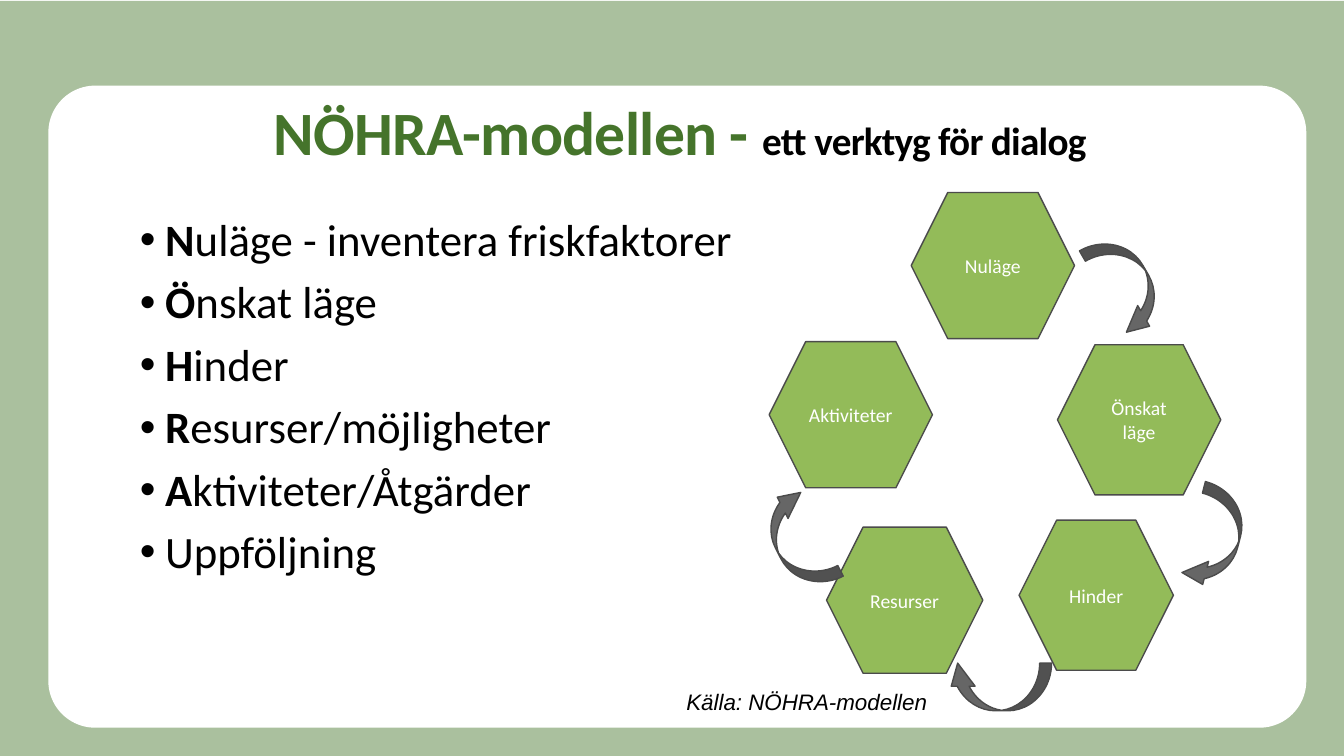
from lxml.etree import SubElement
from pptx import Presentation
from pptx.dml.color import RGBColor
from pptx.enum.shapes import MSO_SHAPE
from pptx.enum.text import MSO_ANCHOR, MSO_AUTO_SIZE, PP_ALIGN
from pptx.oxml.ns import qn
from pptx.util import Inches, Pt

COLORS = {
    "backdrop": "44752A",
    "panel": "FFFFFF",
    "title": "45742B",
    "text": "000000",
    "hexagon": "93BB59",
    "hexagon_text": "FFFFFF",
    "arrow": "666666",
    "outline": "4B4B4B",
}

# Places are left, top, width, height in percent of the slide's size.
BULLETS = [
    ("N", "uläge - inventera friskfaktorer"),
    ("Ö", "nskat läge"),
    ("H", "inder"),
    ("R", "esurser/möjligheter"),
    ("A", "ktiviteter/Åtgärder"),
    ("", "Uppföljning"),
]
HEXAGONS = [
    ("Nuläge", (67.8, 25.47, 12.15, 19.33)),
    ("Önskat läge", (78.68, 45.6, 12.15, 19.87)),
    ("Hinder", (75.83, 68.8, 11.48, 19.87)),
    ("Resurser", (61.5, 69.73, 11.63, 19.33)),
    ("Aktiviteter", (57.23, 45.2, 12.15, 19.33)),
]
ARROW_SIZE = (3.55, 14)
ARROWS = [
    ((82.05, 30.67), 330),
    ((88.65, 64.27), 14.5),
    ((72.53, 83.87), 90),
    ((57.6, 64.4), 153.1),
]


class SlideBuilder:
    def __init__(self, presentation, font="Calibri"):
        self.width = presentation.slide_width
        self.height = presentation.slide_height
        self.slide = presentation.slides.add_slide(presentation.slide_layouts[6])
        self.font = font

    def place(self, place):
        """Turn percentages of the slide into lengths."""
        left, top, width, height = place
        return (int(left * self.width / 100), int(top * self.height / 100),
                int(width * self.width / 100), int(height * self.height / 100))

    def shape(self, kind, place, fill, outline=None, adjustments=(), rotation=0):
        shape = self.slide.shapes.add_shape(kind, *self.place(place))
        shape.shadow.inherit = False
        shape.rotation = rotation
        for index, value in enumerate(adjustments):
            shape.adjustments[index] = value
        shape.fill.solid()
        shape.fill.fore_color.rgb = RGBColor.from_string(COLORS[fill])
        if outline:
            shape.line.color.rgb = RGBColor.from_string(COLORS[outline])
            shape.line.width = Pt(1)
        else:
            shape.line.fill.background()
        return shape

    def backdrop(self, place, opacity):
        shape = self.shape(MSO_SHAPE.RECTANGLE, place, "backdrop")
        color = shape.fill._xPr.find(qn("a:solidFill"))[0]
        SubElement(color, qn("a:alpha"), val=str(opacity * 1000))

    def text_frame(self, place):
        frame = self.slide.shapes.add_textbox(*self.place(place)).text_frame
        frame.word_wrap = True
        return frame

    def run(self, paragraph, text, size, color="text", bold=False, italic=False, font=None):
        run = paragraph.add_run()
        run.text = text
        run.font.name = font or self.font
        run.font.size = Pt(size)
        run.font.bold = bold
        run.font.italic = italic
        run.font.color.rgb = RGBColor.from_string(COLORS[color])
        return run

    def title(self, place, parts):
        paragraph = self.text_frame(place).paragraphs[0]
        paragraph.alignment = PP_ALIGN.CENTER
        paragraph.line_spacing = 0.9
        for text, size, color in parts:
            run = self.run(paragraph, text, size, color, bold=True)
            run._r.get_or_add_rPr().set("spc", "-50")

    def bullet_list(self, place, items):
        frame = self.text_frame(place)
        for index, (initial, rest) in enumerate(items):
            paragraph = frame.add_paragraph() if index else frame.paragraphs[0]
            properties = paragraph._p.get_or_add_pPr()
            properties.set("marL", str(Inches(0.25)))
            properties.set("indent", str(-Inches(0.25)))
            SubElement(properties, qn("a:buFont"), typeface="Arial")
            SubElement(properties, qn("a:buChar"), char="•")
            paragraph.line_spacing = 0.9
            if index:
                paragraph.space_before = Pt(10)
            if initial:
                self.run(paragraph, initial, 32, bold=True)
            self.run(paragraph, rest, 32)

    def hexagon(self, text, place):
        shape = self.shape(MSO_SHAPE.HEXAGON, place, "hexagon", "outline")
        shape.text_frame.word_wrap = True
        shape.text_frame.vertical_anchor = MSO_ANCHOR.MIDDLE
        paragraph = shape.text_frame.paragraphs[0]
        paragraph.alignment = PP_ALIGN.CENTER
        self.run(paragraph, text, 14, "hexagon_text")

    def arrow(self, corner, rotation):
        self.shape(MSO_SHAPE.CURVED_LEFT_ARROW, corner + ARROW_SIZE, "arrow",
                   "outline", (0.25, 0.5, 0.485), rotation)

    def source_line(self, place, text):
        frame = self.text_frame(place)
        frame.auto_size = MSO_AUTO_SIZE.SHAPE_TO_FIT_TEXT
        self.run(frame.paragraphs[0], text, 16, italic=True, font="Arial")


def main():
    presentation = Presentation()
    presentation.slide_width = Inches(13.333)
    presentation.slide_height = Inches(7.5)
    builder = SlideBuilder(presentation)

    builder.backdrop((0, 0.13, 100, 99.87), opacity=45)
    builder.shape(MSO_SHAPE.ROUNDED_RECTANGLE, (3.6, 11.33, 93.6, 84.93), "panel",
                  adjustments=(0.073,))
    builder.title((2.85, 12.93, 95.5, 19.33), [
        ("NÖHRA-modellen - ", 44, "title"),
        ("ett verktyg för dialog", 28, "text"),
    ])
    builder.bullet_list((9.68, 28.13, 47.63, 60.93), BULLETS)
    for text, place in HEXAGONS:
        builder.hexagon(text, place)
    for corner, rotation in ARROWS:
        builder.arrow(corner, rotation)
    builder.source_line((50.33, 90.4, 20.85, 4.93), "Källa: NÖHRA-modellen")

    presentation.save("out.pptx")


if __name__ == "__main__":
    main()
